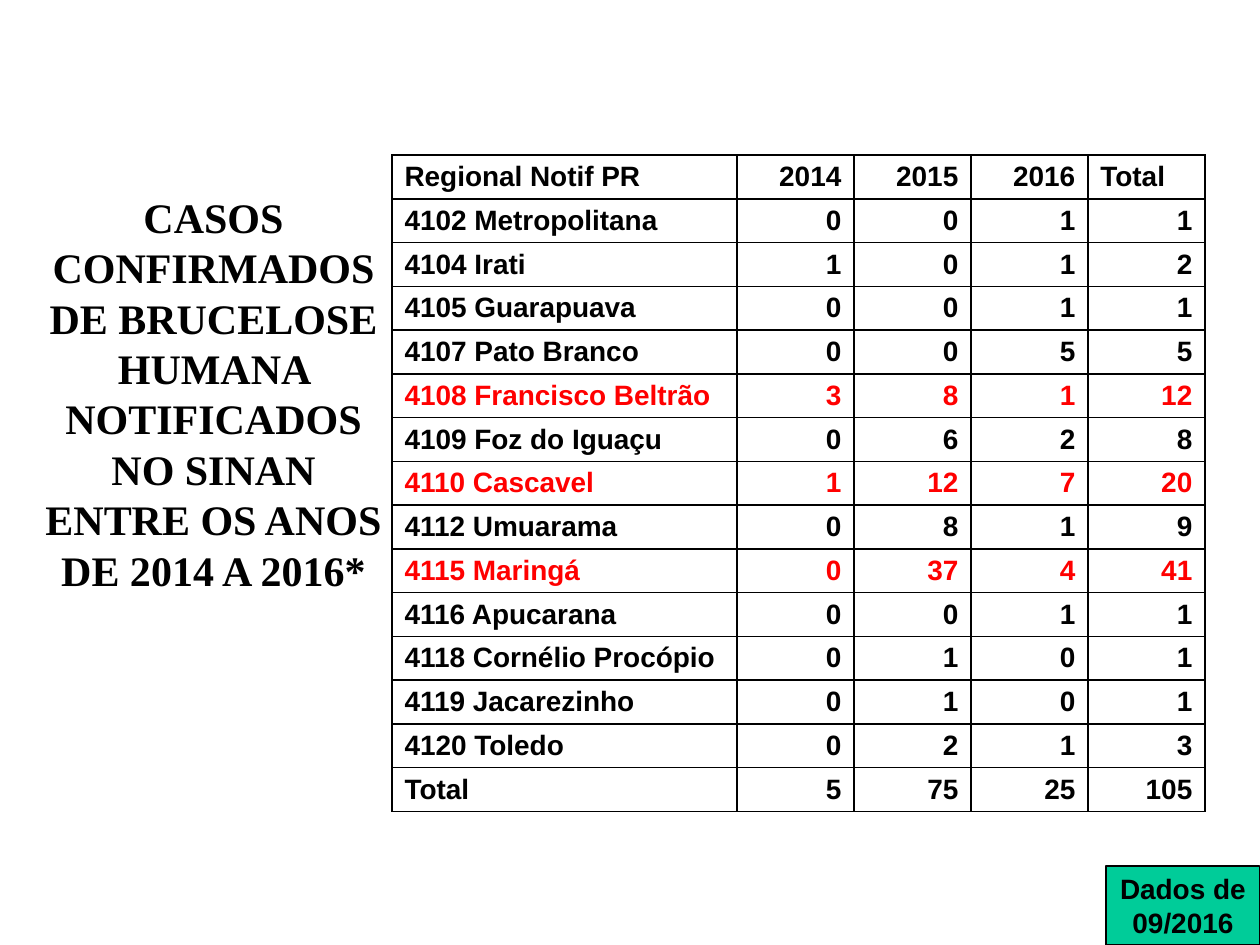
from lxml.etree import SubElement
from pptx import Presentation
from pptx.dml.color import RGBColor as Rgb
from pptx.enum.shapes import MSO_SHAPE as Shape
from pptx.enum.text import MSO_ANCHOR as Anchor, MSO_AUTO_SIZE as Fit, PP_ALIGN as Align
from pptx.oxml.ns import qn
from pptx.util import Pt

PX = 914400 // 126
HUES = {"ink": "000000", "alert": "FF0000", "badge": "00CC99", "paper": "FFFFFF"}
TITLE = ("CASOS CONFIRMADOS DE BRUCELOSE HUMANA NOTIFICADOS NO SINAN "
         "ENTRE OS ANOS DE 2014 A 2016*")
HEAD = ("Regional Notif PR", "2014", "2015", "2016", "Total")
CASES = (
    ("4102 Metropolitana", 0, 0, 1, 1),
    ("4104 Irati", 1, 0, 1, 2),
    ("4105 Guarapuava", 0, 0, 1, 1),
    ("4107 Pato Branco", 0, 0, 5, 5),
    ("4108 Francisco Beltrão", 3, 8, 1, 12),
    ("4109 Foz do Iguaçu", 0, 6, 2, 8),
    ("4110 Cascavel", 1, 12, 7, 20),
    ("4112 Umuarama", 0, 8, 1, 9),
    ("4115 Maringá", 0, 37, 4, 41),
    ("4116 Apucarana", 0, 0, 1, 1),
    ("4118 Cornélio Procópio", 0, 1, 0, 1),
    ("4119 Jacarezinho", 0, 1, 0, 1),
    ("4120 Toledo", 0, 2, 1, 3),
    ("Total", 5, 75, 25, 105),
)
ALERTS = {"4108 Francisco Beltrão", "4110 Cascavel", "4115 Maringá"}
WIDTHS = (345, 117, 117, 117, 117)
ROW = 39
SERIF = {"name": "Times New Roman", "size": Pt(24), "bold": True}
SANS = {"name": "Arial", "size": Pt(16), "bold": True}


def scale(*sizes):
    """Turn px lengths into EMU."""
    return [size * PX for size in sizes]


def paint(fill, hue):
    """Give a fill one solid colour."""
    fill.solid()
    fill.fore_color.rgb = Rgb.from_string(HUES[hue])


def write(frame, text, style, align, hue="ink"):
    """Write styled lines into a text frame."""
    frame.text = text
    for para in frame.paragraphs:
        para.alignment = align
        for run in para.runs:
            for key, value in style.items():
                setattr(run.font, key, value)
            run.font.color.rgb = Rgb.from_string(HUES[hue])


def add_title(slide):
    """Place the title beside the table."""
    title = slide.shapes.title
    title.left, title.top, title.width, title.height = scale(25, 314, 377, 158)
    frame = title.text_frame
    write(frame, TITLE, SERIF, Align.CENTER)
    frame.auto_size, frame.word_wrap = Fit.NONE, True
    frame.vertical_anchor = Anchor.MIDDLE


def add_badge(slide):
    """Add the date badge in the corner."""
    badge = slide.shapes.add_shape(Shape.RECTANGLE, *scale(1106, 866, 154, 79))
    badge.shadow.inherit = False
    paint(badge.fill, "badge")
    paint(badge.line.fill, "ink")
    badge.line.width = Pt(0.75)
    frame = badge.text_frame
    write(frame, "Dados de\n09/2016", SANS, Align.CENTER)
    frame.word_wrap, frame.vertical_anchor = False, Anchor.MIDDLE


def add_borders(cell):
    """Draw the four borders of a cell."""
    props = cell._tc.get_or_add_tcPr()
    for spot, side in enumerate(("a:lnL", "a:lnR", "a:lnT", "a:lnB")):
        line = props.makeelement(qn(side), {"w": str(Pt(1))})
        fill = SubElement(line, qn("a:solidFill"))
        SubElement(fill, qn("a:srgbClr"), val=HUES["ink"])
        props.insert(spot, line)


def add_cases(slide):
    """Add the table of cases by region and year."""
    rows = (HEAD, *CASES)
    place = scale(392, 155, sum(WIDTHS), ROW * len(rows))
    table = slide.shapes.add_table(len(rows), len(HEAD), *place).table
    for col, width in zip(table.columns, scale(*WIDTHS)):
        col.width = width
    for r, row in enumerate(rows):
        hue = "alert" if row[0] in ALERTS else "ink"
        for c, value in enumerate(row):
            cell = table.cell(r, c)
            left = c == 0 or value == "Total"
            write(cell.text_frame, str(value), SANS, Align.LEFT if left else Align.RIGHT, hue)
            cell.vertical_anchor = Anchor.BOTTOM
            paint(cell.fill, "paper")
            add_borders(cell)


def main():
    """Build and save the slide."""
    deck = Presentation()
    deck.slide_width, deck.slide_height = scale(1260, 945)
    slide = deck.slides.add_slide(deck.slide_layouts[5])
    add_title(slide)
    add_badge(slide)
    add_cases(slide)
    deck.save("out.pptx")


if __name__ == "__main__":
    main()
